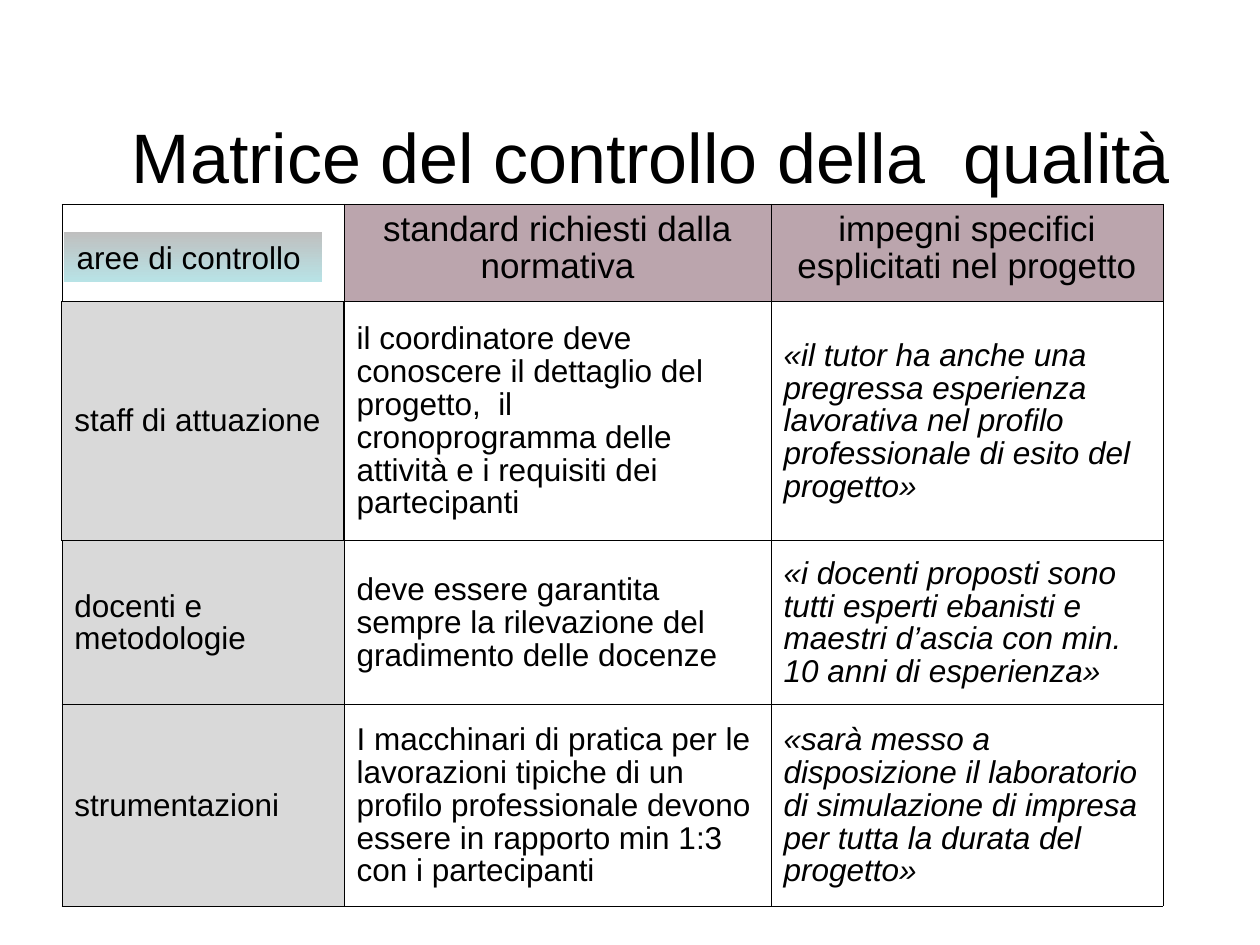
from lxml.etree import SubElement
from pptx import Presentation
from pptx.dml.color import RGBColor
from pptx.enum.shapes import MSO_SHAPE
from pptx.enum.text import MSO_ANCHOR, PP_ALIGN
from pptx.oxml.ns import qn
from pptx.util import Inches, Pt


def write(frame, text, size, align=PP_ALIGN.LEFT, italic=False):
    frame.word_wrap = True
    para = frame.paragraphs[0]
    para.alignment = align
    span = para.add_run()
    span.text = text
    span.font.name = "Arial"
    span.font.size = Pt(size)
    span.font.italic = italic
    span.font.color.rgb = RGBColor.from_string("000000")
    return para


def set_borders(cell, widths):
    properties = cell._tc.get_or_add_tcPr()
    for position, side in enumerate("LRTB"):
        line = SubElement(properties, qn(f"a:ln{side}"), w=str(Pt(widths.get(side, 0.23))))
        fill = SubElement(line, qn("a:solidFill"))
        SubElement(fill, qn("a:srgbClr"), val="000000")


deck = Presentation()
deck.slide_width, deck.slide_height = Inches(10), Inches(7.5)
page = deck.slides.add_slide(deck.slide_layouts[6])

# Title
title = page.shapes.add_textbox(Inches(0.59), Inches(0.61), Inches(9.15), Inches(1.25))
title.text_frame.vertical_anchor = MSO_ANCHOR.MIDDLE
write(title.text_frame, "Matrice del controllo della  qualità", 40, PP_ALIGN.CENTER)

# Quality matrix
rows = [
    ["", "standard richiesti dalla normativa", "impegni specifici esplicitati nel progetto"],
    ["staff di attuazione",
     "il coordinatore deve conoscere il dettaglio del progetto,  il cronoprogramma delle "
     "attività e i requisiti dei partecipanti",
     "«il tutor ha anche una pregressa esperienza lavorativa nel profilo professionale "
     "di esito del progetto»"],
    ["docenti e metodologie",
     "deve essere garantita sempre la rilevazione del gradimento delle docenze",
     "«i docenti proposti sono tutti esperti ebanisti e maestri d’ascia con min. 10 anni "
     "di esperienza»"],
    ["strumentazioni",
     "I macchinari di pratica per le lavorazioni tipiche di un profilo professionale "
     "devono essere in rapporto min 1:3 con i partecipanti",
     "«sarà messo a disposizione il laboratorio di simulazione di impresa per tutta la "
     "durata del progetto»"],
]
column_widths = [2.24, 3.39, 3.11]
row_heights = [0.77, 1.9, 1.3, 1.6]
heavy_borders = {(1, 0): {"L": 0.91, "R": 0.91}, (1, 1): {"L": 0.91, "B": 0.91}, (2, 1): {"T": 0.91}}

matrix = page.shapes.add_table(4, 3, Inches(0.49), Inches(1.62), Inches(8.74), Inches(5.57)).table
matrix.first_row = matrix.horz_banding = False
for column, width in zip(matrix.columns, column_widths):
    column.width = Inches(width)
for row, height in zip(matrix.rows, row_heights):
    row.height = Inches(height)

for r, texts in enumerate(rows):
    for c, text in enumerate(texts):
        cell = matrix.cell(r, c)
        cell.margin_left = cell.margin_right = Inches(0.1)
        cell.margin_top, cell.margin_bottom = Inches(0.07), Inches(0.05)
        cell.vertical_anchor = MSO_ANCHOR.MIDDLE if r else MSO_ANCHOR.TOP
        set_borders(cell, heavy_borders.get((r, c), {}))
        color = "BBA5AD" if r == 0 and c else "D9D9D9" if r and c == 0 else None
        if color:
            cell.fill.solid()
            cell.fill.fore_color.rgb = RGBColor.from_string(color)
        else:
            cell.fill.background()
        if text:
            align = PP_ALIGN.LEFT if r else PP_ALIGN.CENTER
            para = write(cell.text_frame, text, 18 if r else 20, align, r > 0 and c == 2)
            para.line_spacing = 0.93

# Label over the corner cell
label = page.shapes.add_shape(MSO_SHAPE.RECTANGLE, Inches(0.51), Inches(1.84), Inches(2.05), Inches(0.4))
label.shadow.inherit = False
label.line.fill.background()
label.fill.gradient()
label.fill.gradient_angle = 270
for stop, color, position in zip(label.fill.gradient_stops, ["BFBFBF", "B8E3E6"], [0, 1]):
    stop.color.rgb = RGBColor.from_string(color)
    stop.position = position
label.text_frame.vertical_anchor = MSO_ANCHOR.TOP
write(label.text_frame, "aree di controllo", 18)

deck.save("out.pptx")
